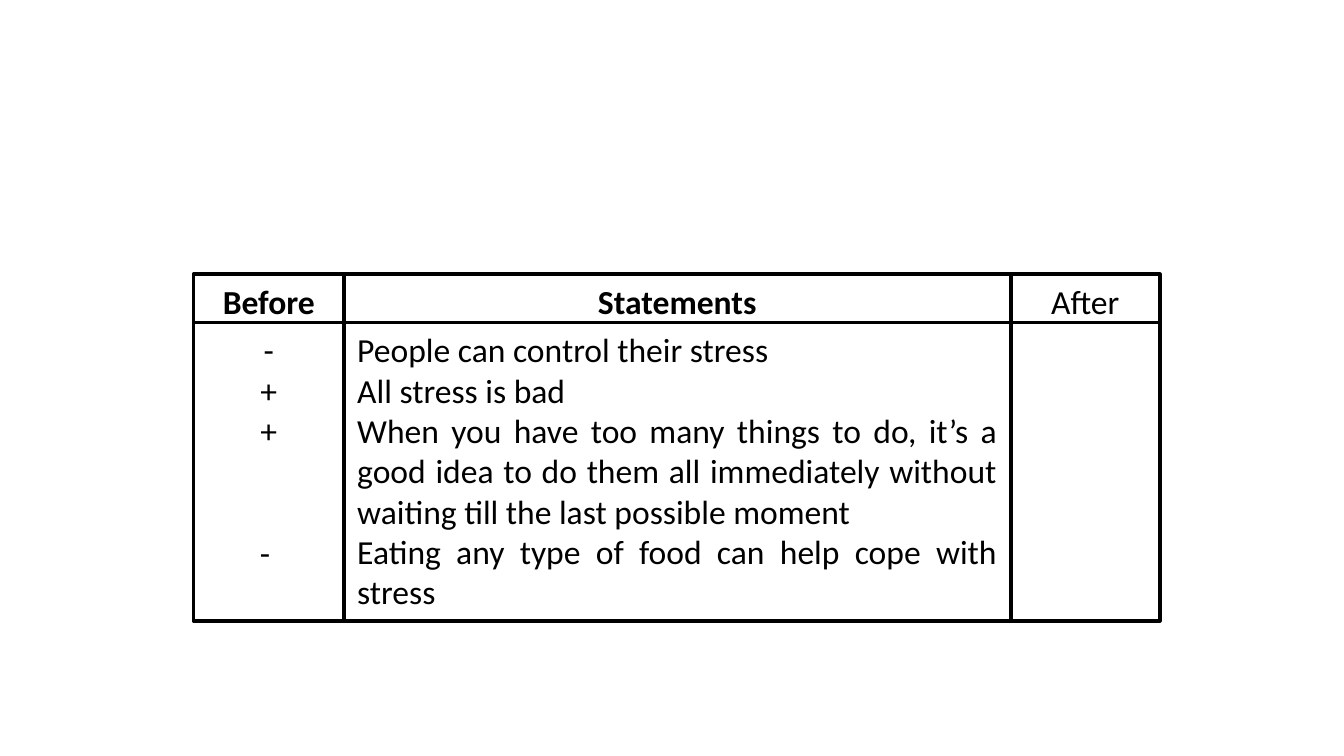
from itertools import accumulate

from pptx import Presentation
from pptx.dml.color import RGBColor
from pptx.enum.shapes import MSO_SHAPE as Shape
from pptx.enum.text import MSO_ANCHOR as Anchor, MSO_AUTO_SIZE as AutoSize, PP_ALIGN as Align
from pptx.util import Inches, Pt

BLACK = RGBColor(0x00, 0x00, 0x00)
WHITE = RGBColor(0xFF, 0xFF, 0xFF)

# Grid of the survey: column widths, row tops and row heights in inches
COLUMN_WIDTHS = [1.12, 4.96, 1.11]
COLUMN_LEFTS = list(accumulate(COLUMN_WIDTHS, initial=1.44))
ROW_TOPS = [2.04, 2.4]
ROW_HEIGHTS = [0.4, 2.22]
BEFORE, STATEMENTS, AFTER = range(3)
HEADER, BODY = range(2)


class SurveySlide:
    font_name = "Calibri"
    font_size = Pt(18)
    line_width = Pt(2)

    def __init__(self, slide):
        self.slide = slide

    def box(self, column, row, lines=(), align=Align.CENTER, bold=False):
        """Draw one outlined box of the grid and return its paragraphs."""
        box = self.slide.shapes.add_shape(
            Shape.RECTANGLE,
            Inches(COLUMN_LEFTS[column]), Inches(ROW_TOPS[row]),
            Inches(COLUMN_WIDTHS[column]), Inches(ROW_HEIGHTS[row]))
        box.shadow.inherit = False
        box.fill.solid()
        box.fill.fore_color.rgb = WHITE
        box.line.color.rgb = BLACK
        box.line.width = self.line_width

        frame = box.text_frame
        frame.word_wrap = True
        frame.vertical_anchor = Anchor.TOP
        if lines:
            frame.auto_size = AutoSize.SHAPE_TO_FIT_TEXT
            frame.text = "\n".join(lines)
        for paragraph in frame.paragraphs:
            paragraph.alignment = align
            for run in paragraph.runs:
                run.font.name = self.font_name
                run.font.size = self.font_size
                run.font.bold = bold
                run.font.color.rgb = BLACK
        return frame.paragraphs


def main():
    prs = Presentation()
    prs.slide_width = Inches(10)
    prs.slide_height = prs.slide_width * 9 // 16
    survey = SurveySlide(prs.slides.add_slide(prs.slide_layouts[6]))

    # Headings
    survey.box(BEFORE, HEADER, ["Before"], bold=True)
    survey.box(STATEMENTS, HEADER, ["Statements"], bold=True)
    survey.box(AFTER, HEADER, ["After"])

    # Statements
    survey.box(STATEMENTS, BODY, [
        "People can control their stress",
        "All stress is bad",
        "When you have too many things to do, it’s a good idea to do them all "
        "immediately without waiting till the last possible moment",
        "Eating any type of food can help cope with stress",
    ], align=Align.JUSTIFY)

    # Answers: the last mark skips the two wrapped lines of the third statement
    marks = survey.box(BEFORE, BODY, ["-", "+", "+", "- "])
    marks[-1].space_before = Pt(44)
    survey.box(AFTER, BODY)

    prs.save("out.pptx")


if __name__ == "__main__":
    main()
